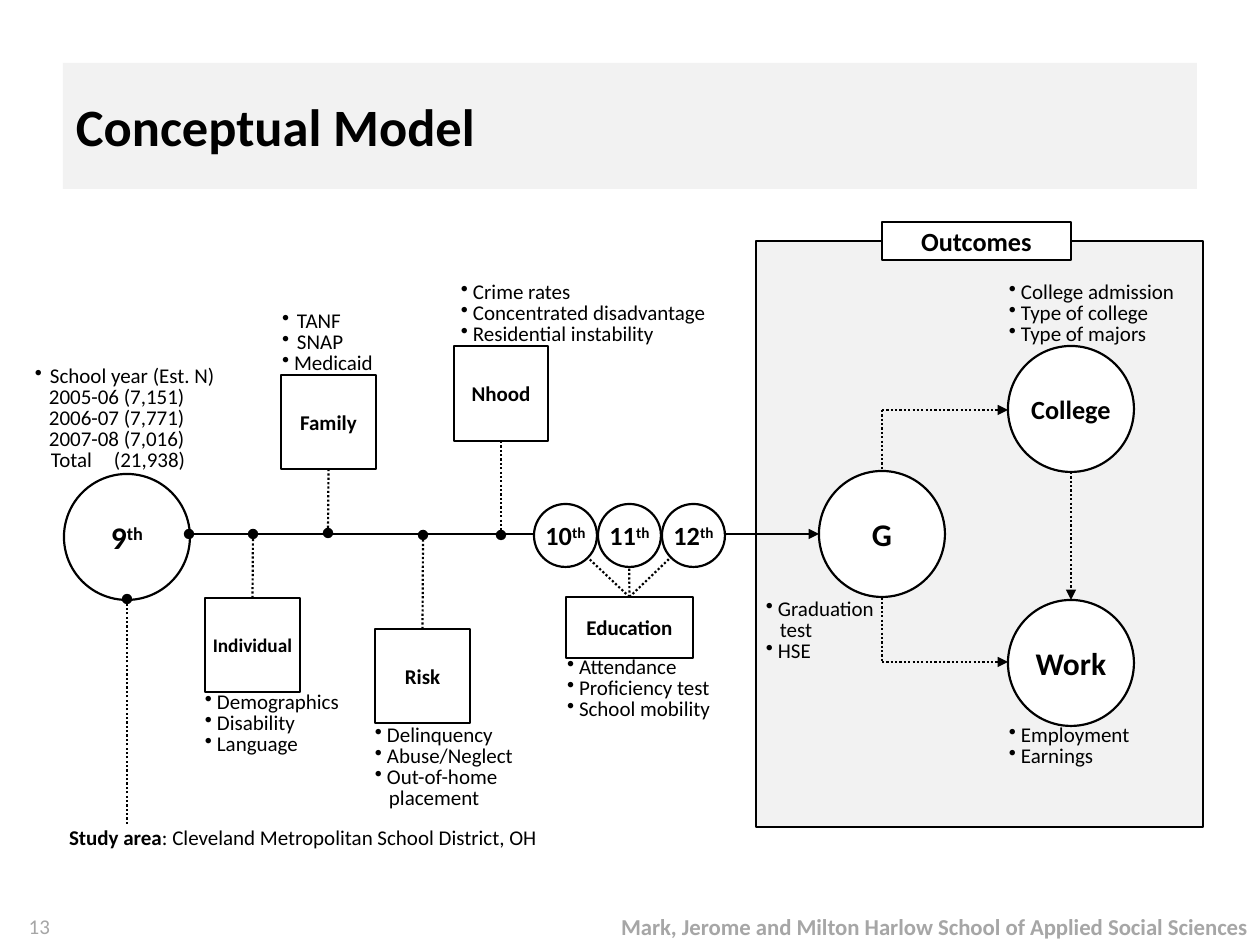
from dataclasses import dataclass
from typing import NamedTuple

from lxml.etree import SubElement
from pptx import Presentation
from pptx.dml.color import RGBColor
from pptx.enum.dml import MSO_LINE
from pptx.enum.shapes import MSO_CONNECTOR, MSO_SHAPE
from pptx.enum.text import MSO_ANCHOR, PP_ALIGN
from pptx.oxml.ns import qn
from pptx.util import Emu, Pt

PX_PER_INCH = 126
BLACK, WHITE, PALE, GREY = "000000", "FFFFFF", "F2F2F2", "A6A6A6"
RECT, OVAL = MSO_SHAPE.RECTANGLE, MSO_SHAPE.OVAL
TOP, BOTTOM = 0, 2
ABOVE, MIDDLE, BELOW = MSO_ANCHOR.BOTTOM, MSO_ANCHOR.MIDDLE, MSO_ANCHOR.TOP
LEFT, CENTER, RIGHT = PP_ALIGN.LEFT, PP_ALIGN.CENTER, PP_ALIGN.RIGHT


class Item(NamedTuple):
    text: str
    margin: int = 12
    bullet: bool = True
    tab: int = 0
    lead: str = ""


@dataclass
class Node:
    label: str
    left: int
    top: int
    width: int
    height: int
    size: int = 12
    kind: int = RECT
    fill: str = ""
    suffix: str = ""
    border: bool = True
    align: int = CENTER
    inset: int = 0


@dataclass
class Note:
    left: int
    top: int
    width: int
    height: int
    anchor: int
    items: list[Item]
    inset: int = 1


class Line(NamedTuple):
    start: tuple[int, int]
    end: tuple[int, int]
    tail: str = ""
    head: str = ""
    dotted: bool = True


def px(length: int) -> Emu:
    return Emu(round(length * 914400 / PX_PER_INCH))


def rgb(value: str) -> RGBColor:
    return RGBColor.from_string(value)


def add_run(paragraph, text: str, size: int, bold: bool = False, color: str = BLACK):
    run = paragraph.add_run()
    run.text = text
    for name, value in {"name": "Calibri", "size": Pt(size), "bold": bold}.items():
        setattr(run.font, name, value)
    run.font.color.rgb = rgb(color)
    return run


def set_frame(frame, anchor: int, left: int, right: int = 0) -> None:
    settings = {"word_wrap": True, "vertical_anchor": anchor, "margin_left": px(left),
                "margin_right": px(right), "margin_top": 0, "margin_bottom": 0}
    for name, value in settings.items():
        setattr(frame, name, value)


def draw_node(shapes, node: Node):
    shape = shapes.add_shape(node.kind, px(node.left), px(node.top), px(node.width), px(node.height))
    shape.shadow.inherit = False
    if node.fill:
        shape.fill.solid()
        shape.fill.fore_color.rgb = rgb(node.fill)
    else:
        shape.fill.background()
    if node.border:
        shape.line.color.rgb = rgb(BLACK)
        shape.line.width = Pt(1.25)
    else:
        shape.line.fill.background()
    set_frame(shape.text_frame, MIDDLE, node.inset, node.inset)
    paragraph = shape.text_frame.paragraphs[0]
    paragraph.alignment = node.align
    if node.label:
        add_run(paragraph, node.label, node.size, True)
    if node.suffix:
        suffix = add_run(paragraph, node.suffix, node.size, True)
        suffix._r.get_or_add_rPr().set("baseline", "30000")
    return shape


def draw_note(shapes, note: Note) -> None:
    frame = shapes.add_textbox(px(note.left), px(note.top), px(note.width), px(note.height)).text_frame
    set_frame(frame, note.anchor, note.inset)
    for index, item in enumerate(note.items):
        paragraph = frame.add_paragraph() if index else frame.paragraphs[0]
        paragraph.line_spacing = Pt(12)
        properties = paragraph._p.get_or_add_pPr()
        properties.set("marL", str(px(item.margin)))
        properties.set("indent", str(px(-item.margin if item.bullet else 0)))
        if item.bullet:
            SubElement(properties, qn("a:buChar"), char="•")
        if item.tab:
            tabs = SubElement(properties, qn("a:tabLst"))
            SubElement(tabs, qn("a:tab"), pos=str(px(item.tab)), algn="l")
        if item.lead:
            add_run(paragraph, item.lead, 12, True)
        add_run(paragraph, item.text, 12)


def draw_line(shapes, line: Line, box=None, side: int = TOP) -> None:
    connector = shapes.add_connector(MSO_CONNECTOR.STRAIGHT, *map(px, line.start + line.end))
    connector.line.color.rgb = rgb(BLACK)
    connector.line.width = Pt(1.25)
    if line.dotted:
        connector.line.dash_style = MSO_LINE.ROUND_DOT
    stroke = connector.line._get_or_add_ln()
    for tag, arrow in {"a:headEnd": line.head, "a:tailEnd": line.tail}.items():
        if arrow:
            SubElement(stroke, qn(tag), type=arrow)
    SubElement(connector._element.spPr, qn("a:effectLst"))
    if box is not None:
        connector.begin_connect(box, side)


def draw_footer(shapes, text: str, left: int, width: int, size: int, bold: bool) -> None:
    frame = shapes.add_textbox(px(left), px(907), px(width), px(38)).text_frame
    set_frame(frame, MIDDLE, 0, 13)
    frame.paragraphs[0].alignment = RIGHT
    add_run(frame.paragraphs[0], text, size, bold, GREY)


def bullets(*texts: str) -> list[Item]:
    return [Item(text) for text in texts]


BACKDROP = [
    Node("", 756, 241, 447, 586, fill=PALE),
    Node("Conceptual Model", 63, 63, 1134, 126, 30, fill=PALE, border=False, align=LEFT, inset=13),
    Node("9", 64, 474, 126, 126, 18, OVAL, WHITE, "th"),
    Node("College", 1008, 346, 126, 126, 15, OVAL, WHITE),
    Node("Work", 1008, 600, 126, 126, 18, OVAL, WHITE),
]
PATHWAYS = [
    Line((189, 534), (819, 534), "triangle", "oval", False),
    Line((882, 410), (1008, 410), "triangle"),
    Line((882, 662), (1008, 662), "triangle"),
    Line((1071, 472), (1071, 600), "triangle"),
    Line((882, 410), (882, 662)),
    Line((127, 824), (127, 599), "oval"),
]
GRADUATION = Node("G", 819, 471, 126, 126, 18, OVAL, WHITE)
FACTORS = [
    (Node("Family", 281, 375, 95, 94), BOTTOM, (328, 533)),
    (Node("Nhood", 454, 346, 94, 95), BOTTOM, (501, 535)),
    (Node("Individual", 205, 598, 95, 94, 11), TOP, (253, 534)),
    (Node("Risk", 375, 629, 95, 94), TOP, (423, 535)),
]
EDUCATION = Node("Education", 566, 597, 127, 61)
GRADES = [Node(str(10 + step), round(534.5 + 63.5 * step), 504, 63, 63, 15, OVAL, WHITE, "th")
          for step in range(3)]
OUTCOMES = Node("Outcomes", 882, 222, 189, 38, 15, fill=WHITE)
NOTES = [
    Note(1008, 271, 220, 75, ABOVE, bullets("College admission", "Type of college", "Type of majors")),
    Note(1008, 726, 220, 75, BELOW, bullets("Employment", "Earnings")),
    Note(765, 600, 114, 58, BELOW, [Item("Graduation"), Item("test", 14, False), Item("HSE")]),
    Note(375, 726, 151, 101, BELOW, [*bullets("Delinquency", "Abuse/Neglect", "Out-of-home"),
                                     Item("placement", 14, False)], 0),
    Note(566, 658, 158, 68, BELOW, bullets("Attendance", "Proficiency test", "School mobility")),
    Note(460, 283, 284, 63, ABOVE, bullets("Crime rates", "Concentrated disadvantage",
                                           "Residential instability")),
    Note(281, 312, 95, 63, ABOVE, [Item("TANF", 15), Item("SNAP", 15), Item("Medicaid")]),
    Note(205, 693, 151, 76, BELOW, bullets("Demographics", "Disability", "Language"), 0),
    Note(34, 359, 187, 113, ABOVE, [
        Item("School year (Est. N)", 15),
        *[Item(year, 14, False) for year in ("2005-06 (7,151)", "2006-07 (7,771)", "2007-08 (7,016)")],
        Item("Total\t(21,938)", 16, False, 91)]),
    Note(68, 825, 549, 25, ABOVE, [
        Item(": Cleveland Metropolitan School District, OH", 0, False, lead="Study area")]),
]


def main() -> None:
    """Build the conceptual model slide and save it."""
    deck = Presentation()
    deck.slide_width, deck.slide_height = px(1260), px(945)
    shapes = deck.slides.add_slide(deck.slide_layouts[6]).shapes
    draw_footer(shapes, "Mark, Jerome and Milton Harlow School of Applied Social Sciences", 504, 756, 13, True)
    draw_footer(shapes, "13", 0, 63, 12, False)
    for node in BACKDROP:
        draw_node(shapes, node)
    for line in PATHWAYS:
        draw_line(shapes, line)
    draw_node(shapes, GRADUATION)
    for note in NOTES:
        draw_note(shapes, note)
    for node, side, dot in FACTORS:
        draw_line(shapes, Line(dot, dot, "oval"), draw_node(shapes, node), side)
    education = draw_node(shapes, EDUCATION)
    for grade in GRADES:
        center = (grade.left + grade.width // 2, 536)
        draw_line(shapes, Line(center, center), education, TOP)
    for node in [*GRADES, OUTCOMES]:
        draw_node(shapes, node)
    deck.save("out.pptx")


if __name__ == "__main__":
    main()
